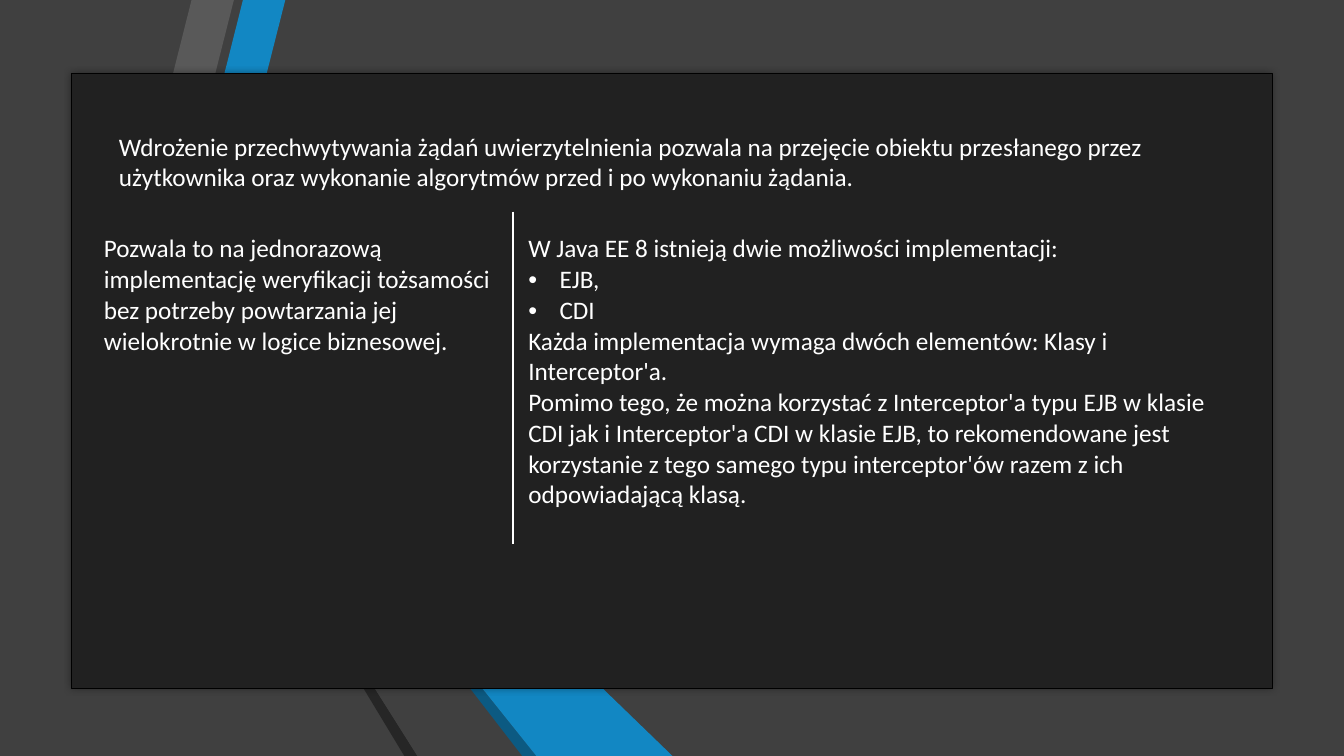
from lxml.etree import SubElement
from pptx import Presentation
from pptx.dml.color import RGBColor
from pptx.enum.shapes import MSO_CONNECTOR as CONN, MSO_SHAPE as SHAPE
from pptx.enum.text import MSO_ANCHOR as ANCHOR
from pptx.oxml.ns import qn
from pptx.util import Inches, Pt

WHITE = RGBColor(0xFF, 0xFF, 0xFF)
BLACK = RGBColor(0x00, 0x00, 0x00)
GREY = RGBColor(0x40, 0x40, 0x40)
LIGHT_GREY = RGBColor(0x59, 0x59, 0x59)
DARK_GREY = RGBColor(0x26, 0x26, 0x26)
PANEL = RGBColor(0x21, 0x21, 0x21)
BLUE = RGBColor(0x12, 0x87, 0xC3)
DARK_BLUE = RGBColor(0x0C, 0x5A, 0x82)
NO_STYLE_NO_GRID = "{2D5ABB26-0587-4C30-8999-92F81FD0307C}"


def write_cell(cell, paragraphs, anchor=ANCHOR.TOP, left=0.15, right=0.15, bullets=()):
    cell.fill.background()
    cell.vertical_anchor = anchor
    cell.margin_left, cell.margin_right = Inches(left), Inches(right)
    cell.margin_top = cell.margin_bottom = Inches(0.15)
    tf = cell.text_frame
    for i, text in enumerate(paragraphs):
        p = tf.paragraphs[0] if i == 0 else tf.add_paragraph()
        r = p.add_run()
        r.text = text
        r.font.size, r.font.name = Pt(18), "Calibri"
        r.font.color.rgb = WHITE
        if i in bullets:
            pPr = p._p.get_or_add_pPr()
            pPr.set("marL", str(Inches(0.31)))
            pPr.set("indent", str(-Inches(0.31)))
            SubElement(pPr, qn("a:buFont")).set("typeface", "Arial")
            SubElement(pPr, qn("a:buChar")).set("char", "•")


prs = Presentation()
prs.slide_width, prs.slide_height = Inches(13.33), Inches(7.5)
s = prs.slides.add_slide(prs.slide_layouts[6])
s.background.fill.solid()
s.background.fill.fore_color.rgb = GREY

# Folded ribbons, from back to front
ribbons = [
    (BLUE, [(1.67, 2.94), (2.06, 3.04), (2.83, 0), (2.41, 0)]),
    (LIGHT_GREY, [(1.58, 2.92), (2.32, 0), (1.9, 0), (1.19, 2.82)]),
    (DARK_GREY, [(1.19, 2.83), (4.01, 7.5), (4.14, 7.5)]),
    (DARK_BLUE, [(1.67, 2.95), (5.18, 7.5), (5.32, 7.5)]),
    (BLUE, [(1.67, 2.94), (5.32, 7.5), (6.67, 7.5), (2.06, 3.04)]),
    (GREY, [(1.19, 2.82), (4.14, 7.5), (5.11, 7.5), (1.58, 2.92)]),
]
for color, points in ribbons:
    start, *rest = [(Inches(x), Inches(y)) for x, y in points]
    builder = s.shapes.build_freeform(*start)
    builder.add_line_segments(rest, close=True)
    sp = builder.convert_to_shape()
    sp.shadow.inherit = False
    sp.fill.solid()
    sp.fill.fore_color.rgb = color
    sp.line.fill.background()

# Dark panel
panel = s.shapes.add_shape(SHAPE.RECTANGLE, Inches(0.71), Inches(0.73), Inches(11.91), Inches(6.1))
panel.shadow.inherit = False
panel.fill.solid()
panel.fill.fore_color.rgb = PANEL
panel.line.color.rgb = BLACK
panel.line.width = Pt(0.25)
shadow = SubElement(panel._element.spPr.find(qn("a:effectLst")), qn("a:outerShdw"))
shadow.set("blurRad", str(Pt(5)))
shadow_color = SubElement(shadow, qn("a:srgbClr"))
shadow_color.set("val", str(BLACK))
SubElement(shadow_color, qn("a:alpha")).set("val", "40000")

# Divider between the columns
divider = s.shapes.add_connector(CONN.STRAIGHT, Inches(5.09), Inches(2.1), Inches(5.09), Inches(5.4))
divider.line.color.rgb = WHITE
divider.line.width = Pt(1.25)
SubElement(divider._element.spPr, qn("a:effectLst"))

# Text table: a merged heading row above two columns
frame = s.shapes.add_table(2, 2, Inches(0.88), Inches(1.06), Inches(11.58), Inches(3.96))
table = frame.table
table.first_row = table.horz_banding = False
table._tbl.tblPr.find(qn("a:tableStyleId")).text = NO_STYLE_NO_GRID
for column, width in zip(table.columns, (4.21, 7.37)):
    column.width = Inches(width)
for row, height in zip(table.rows, (1.11, 2.85)):
    row.height = Inches(height)
table.cell(0, 0).merge(table.cell(0, 1))

write_cell(table.cell(0, 0), [
    "Wdrożenie przechwytywania żądań uwierzytelnienia pozwala na przejęcie obiektu "
    "przesłanego przez użytkownika oraz wykonanie algorytmów przed i po wykonaniu żądania.",
], anchor=ANCHOR.MIDDLE, left=0.3, right=0.1)
write_cell(table.cell(1, 0), [
    "Pozwala to na jednorazową implementację weryfikacji tożsamości bez potrzeby "
    "powtarzania jej wielokrotnie w logice biznesowej.",
])
write_cell(table.cell(1, 1), [
    "W Java EE 8 istnieją dwie możliwości implementacji:",
    "EJB,",
    "CDI",
    "Każda implementacja wymaga dwóch elementów: Klasy i Interceptor'a.",
    "Pomimo tego, że można korzystać z Interceptor'a typu EJB w klasie CDI jak i "
    "Interceptor'a CDI w klasie EJB, to rekomendowane jest korzystanie z tego samego "
    "typu interceptor'ów razem z ich odpowiadającą klasą.",
], bullets=(1, 2))

prs.save("out.pptx")
